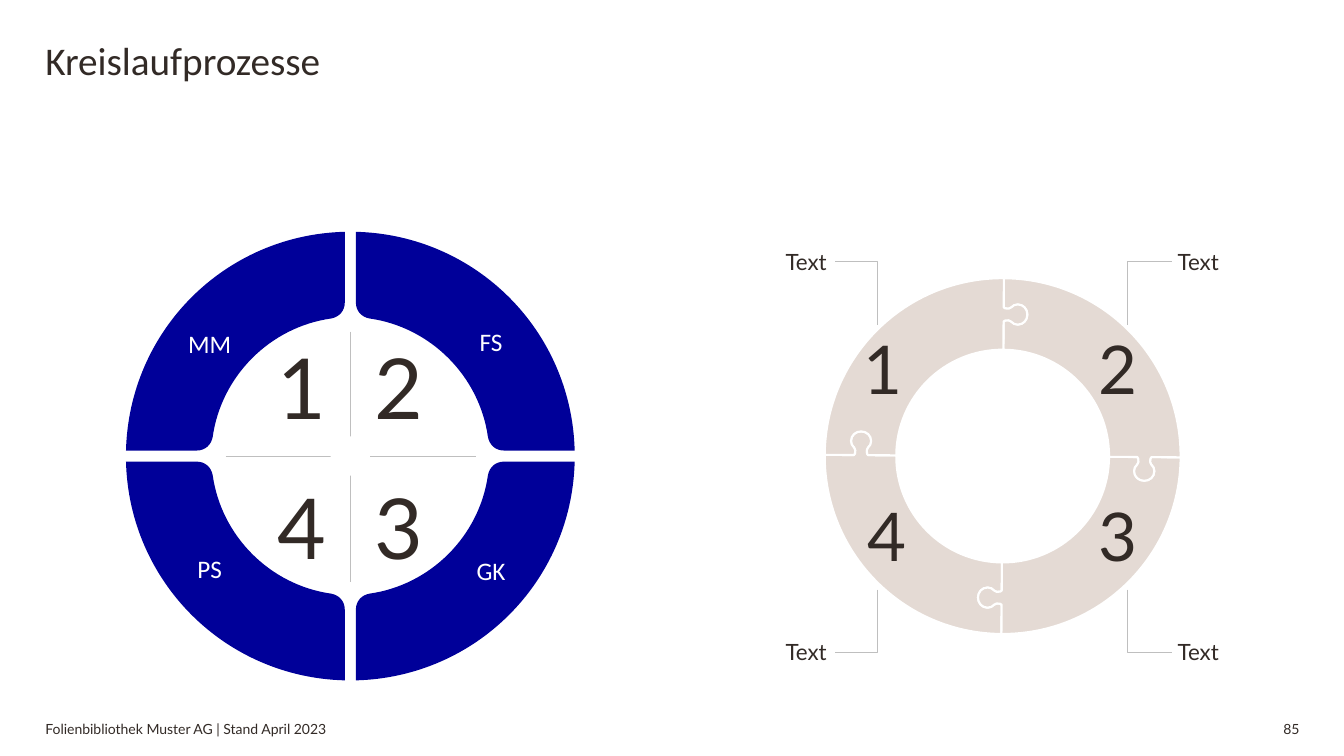
"""Build a slide with two four-part cycle diagrams."""
from math import cos, radians, sin

from lxml import etree
from pptx import Presentation
from pptx.dml.color import RGBColor
from pptx.enum.shapes import MSO_CONNECTOR, MSO_SHAPE
from pptx.enum.text import MSO_ANCHOR, PP_ALIGN
from pptx.oxml.ns import qn
from pptx.util import Inches, Pt

LEFT, CENTER, RIGHT = PP_ALIGN.LEFT, PP_ALIGN.CENTER, PP_ALIGN.RIGHT
TOP, MIDDLE, BOTTOM = MSO_ANCHOR.TOP, MSO_ANCHOR.MIDDLE, MSO_ANCHOR.BOTTOM
STRAIGHT, RECTANGLE = MSO_CONNECTOR.STRAIGHT, MSO_SHAPE.RECTANGLE
hex_color = RGBColor.from_string
INK, BLUE, SAND, GREY, WHITE = "322A26", "000099", "E4DAD4", "BFBFBF", "FFFFFF"


def write(box, text, size, align=LEFT, anchor=TOP, inset=0, wrap=True, font="Lato", color=INK):
    frame = box.text_frame
    frame.word_wrap = wrap
    frame.vertical_anchor = anchor
    frame.margin_left = frame.margin_right = Inches(inset)
    frame.margin_top = frame.margin_bottom = Inches(inset)
    para = frame.paragraphs[0]
    para.alignment = align
    span = para.add_run()
    span.text = text
    span.font.size = Pt(size)
    span.font.name = font
    span.font.color.rgb = hex_color(color)


def draw_outline(start, segments, fill=None, line=None, width=0.75):
    """Draw complex-number points: single points are lines, longer segments cubic curves."""
    points = [(Inches(p.real), Inches(p.imag)) for segment in segments for p in segment]
    builder = page.shapes.build_freeform(Inches(start.real), Inches(start.imag))
    builder.add_line_segments(points, close=fill is not None)
    shape = builder.convert_to_shape()
    shape.shadow.inherit = False
    steps = list(shape._element.iter(qn("a:lnTo")))
    for segment in segments:
        if len(segment) == 1:
            steps.pop(0)
            continue
        for _ in range(len(segment) // 3):
            curve = etree.Element(qn("a:cubicBezTo"))
            steps[0].addprevious(curve)
            for step in steps[:3]:
                curve.append(step[0])
                step.getparent().remove(step)
            steps = steps[3:]
    if fill:
        shape.fill.solid()
        shape.fill.fore_color.rgb = hex_color(fill)
    else:
        shape.fill.background()
    if line:
        shape.line.color.rgb = hex_color(line)
        shape.line.width = Pt(width)
    else:
        shape.line.fill.background()


deck = Presentation()
deck.slide_width, deck.slide_height = Inches(13.33), Inches(7.5)
page = deck.slides.add_slide(deck.slide_layouts[5])

title = page.shapes.title
title.left, title.top, title.width, title.height = map(Inches, (0.45, 0.36, 9.61, 0.55))
write(title, "Kreislaufprozesse", 28, font="Calibri")

wheel_center = 3.475 + 4.525j
wheel_start = 0.055 - 2.225j
wheel_segments = [
    [1.245 - 2.195j, 2.195 - 1.245j, 2.225 - 0.055j],
    [1.525 - 0.055j],
    [1.44 - 0.055j, 1.38 - 0.11j, 1.365 - 0.19j,
     1.28 - 0.795j, 0.795 - 1.28j, 0.19 - 1.365j,
     0.11 - 1.38j, 0.055 - 1.44j, 0.055 - 1.525j],
]
for quarter in range(4):
    turn = 1j ** quarter
    draw_outline(wheel_center + wheel_start * turn,
                 [[wheel_center + p * turn for p in segment] for segment in wheel_segments],
                 fill=BLUE)

puzzle_center = 9.945 + 4.525j
outer, inner, bend = 1.765, 1.055, 0.5523
half_knob = [
    -1.475j,
    0.01 - 1.475j, 0.01 - 1.465j, 0.015 - 1.465j,
    0.04 - 1.455j, 0.06 - 1.465j, 0.075 - 1.475j,
    0.09 - 1.495j, 0.115 - 1.505j, 0.14 - 1.505j,
    0.195 - 1.505j, 0.235 - 1.46j, 0.235 - 1.405j,
]
knob = half_knob + [complex(p.real, -2.81 - p.imag) for p in half_knob[-2::-1]]
side_knob = [p * 1j for p in knob]
top_knob = knob[::-1]
puzzle_segments = [
    [complex(bend * outer, -outer), complex(outer, -bend * outer), complex(outer)],
    side_knob[:1], side_knob[1:], [complex(inner)],
    [complex(inner, -bend * inner), complex(bend * inner, -inner), complex(0, -inner)],
    top_knob[:1], top_knob[1:],
]
tilt = complex(cos(radians(0.4)), sin(radians(0.4)))
for quarter in (2, 1, 0, 3):
    turn = tilt * 1j ** quarter
    draw_outline(puzzle_center + complex(0, -outer) * turn,
                 [[puzzle_center + p * turn for p in segment] for segment in puzzle_segments],
                 fill=SAND, line=WHITE, width=1.5)

for ring_x, label_x in ((8.7, 8.28), (11.18, 11.62)):
    for ring_y, label_y in ((3.22, 2.59), (5.85, 6.47)):
        draw_outline(complex(ring_x, ring_y),
                     [[complex(ring_x, label_y)], [complex(label_x, label_y)]], line=GREY)

for ends in ((3.48, 3.29, 3.48, 5.77), (2.24, 4.53, 4.72, 4.53)):
    axis = page.shapes.add_connector(STRAIGHT, *map(Inches, ends))
    axis.line.color.rgb = hex_color(GREY)
    axis.line.width = Pt(0.75)
    etree.SubElement(axis._element.spPr, qn("a:effectLst"))

hub = page.shapes.add_shape(RECTANGLE, *map(Inches, (3.28, 4.33, 0.39, 0.39)))
hub.shadow.inherit = False
hub.fill.solid()
hub.fill.fore_color.rgb = hex_color(WHITE)
hub.line.fill.background()

number = {"inset": 0.09}
sector = {"align": CENTER, "anchor": MIDDLE, "wrap": False, "font": "Calibri", "color": WHITE}
labels = [
    ("1", 60, (1.97, 3.2, 1.36, 1.22), {"align": RIGHT, "anchor": BOTTOM, **number}),
    ("2", 60, (3.62, 3.2, 1.36, 1.22), {"anchor": BOTTOM, **number}),
    ("4", 60, (1.97, 4.63, 1.36, 1.22), {"align": RIGHT, **number}),
    ("3", 60, (3.62, 4.63, 1.36, 1.22), number),
    ("MM", 18, (1.83, 3.16, 0.5, 0.5), sector),
    ("FS", 18, (4.62, 3.14, 0.5, 0.5), sector),
    ("PS", 18, (1.83, 5.39, 0.5, 0.5), sector),
    ("GK", 18, (4.62, 5.41, 0.5, 0.5), sector),
    ("1", 48, (8.08, 2.92, 1.36, 1.22), {"align": CENTER, "anchor": BOTTOM, **number}),
    ("2", 48, (10.41, 2.92, 1.36, 1.22), {"align": CENTER, "anchor": BOTTOM, **number}),
    ("4", 48, (8.12, 4.81, 1.36, 1.22), {"align": CENTER, **number}),
    ("3", 48, (10.41, 4.81, 1.36, 1.22), {"align": CENTER, **number}),
    ("Folienbibliothek Muster AG | Stand April 2023", 10, (0.45, 7.16, 11.06, 0.16),
     {"anchor": BOTTOM}),
    ("85", 10, (12.58, 7.16, 0.31, 0.16), {"align": RIGHT, "anchor": BOTTOM, "wrap": False}),
]
for top in (2.17, 6.04):
    labels.append(("Text", 16, (6.98, top, 1.22, 0.85), {"align": RIGHT, "anchor": MIDDLE}))
    labels.append(("Text", 16, (11.68, top, 1.2, 0.85), {"anchor": MIDDLE}))
for text, size, place, style in labels:
    write(page.shapes.add_textbox(*map(Inches, place)), text, size, **style)

deck.save("out.pptx")
